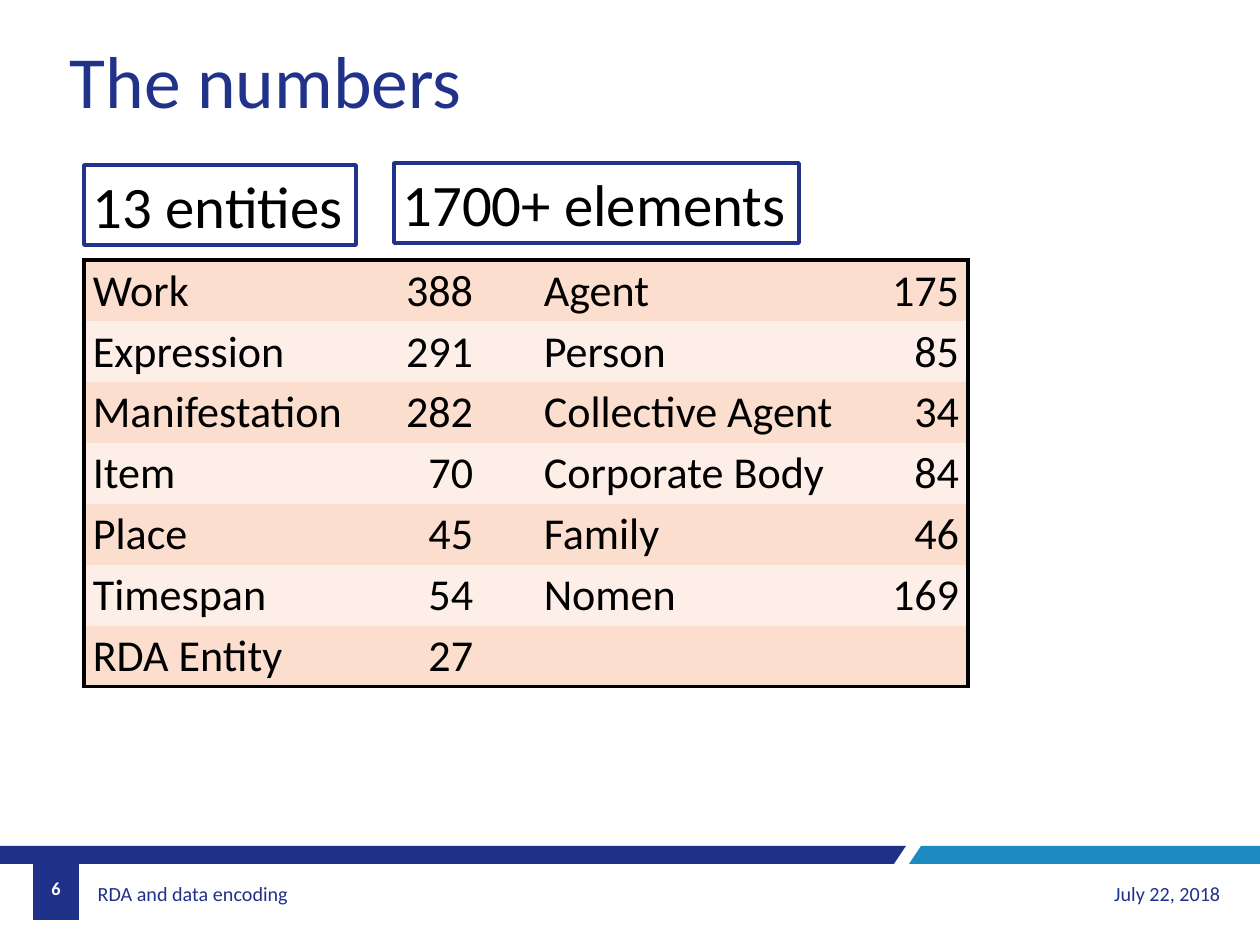
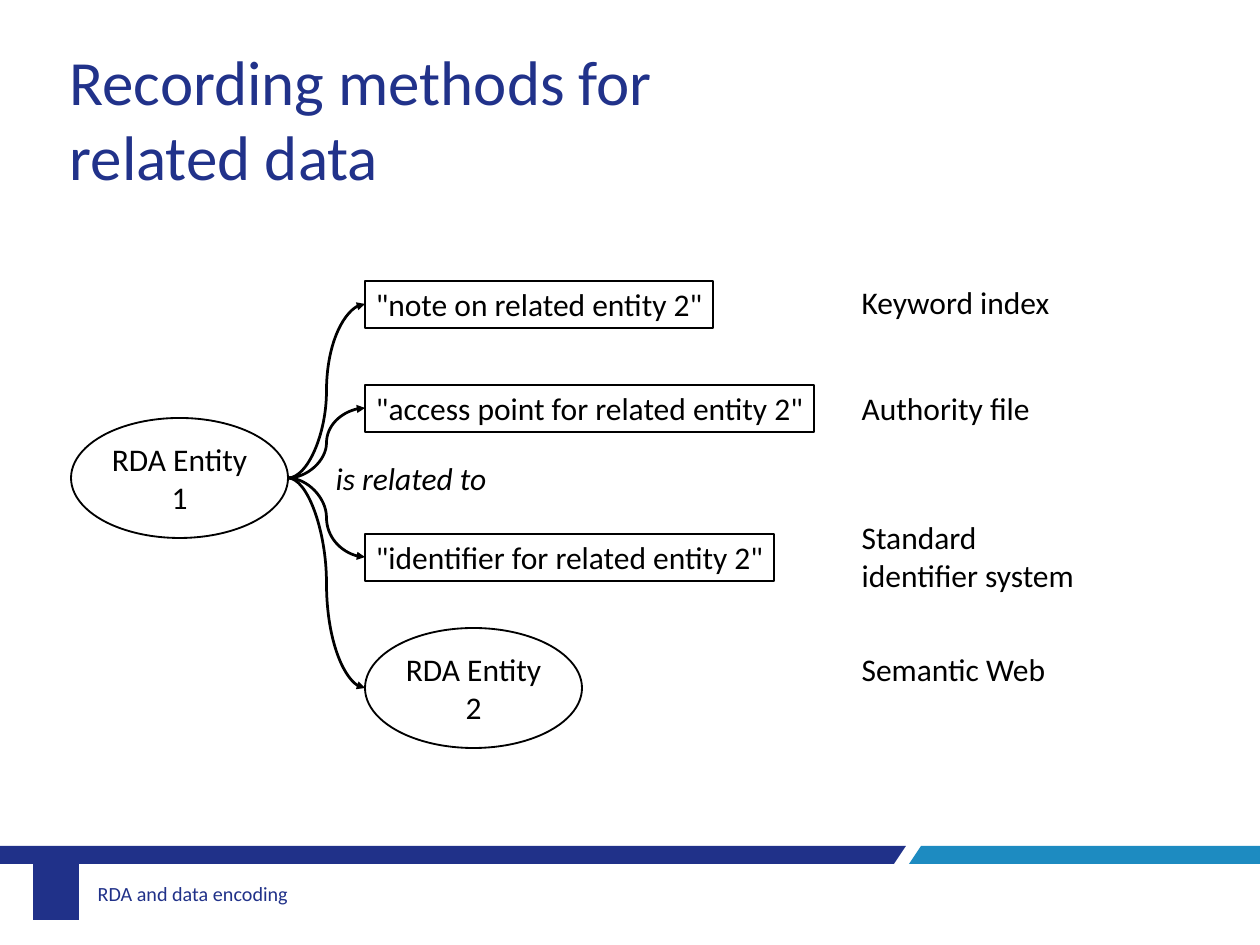
"""Builds two slides on entities and recording methods."""
from lxml import etree
from pptx import Presentation
from pptx.dml.color import RGBColor
from pptx.enum.shapes import MSO_CONNECTOR, MSO_SHAPE
from pptx.enum.text import MSO_ANCHOR, PP_ALIGN
from pptx.oxml.ns import qn
from pptx.util import Pt

PX = 10367
FONT = "Calibri"
RECT, OVAL = MSO_SHAPE.RECTANGLE, MSO_SHAPE.OVAL
CURVE = MSO_CONNECTOR.CURVE
LEFT, MID, RIGHT = PP_ALIGN.LEFT, PP_ALIGN.CENTER, PP_ALIGN.RIGHT
TOP, CENTER = MSO_ANCHOR.TOP, MSO_ANCHOR.MIDDLE
HUES = {
    "navy": "203189",
    "title": "21328A",
    "blue": "1D8BC1",
    "black": "000000",
    "white": "FFFFFF",
    "peach": "FBDECD",
    "pale": "FDEFE8",
}


def hue(name):
    return RGBColor.from_string(HUES[name])


def write(frame, text, size=25.7, color="black", align=LEFT, bold=False, slant=False):
    for i, line in enumerate(text.split("\n")):
        para = frame.add_paragraph() if i else frame.paragraphs[0]
        para.alignment = align
        run = para.add_run()
        run.text = line
        font = run.font
        font.name, font.size, font.bold, font.italic = FONT, Pt(size), bold, slant
        font.color.rgb = hue(color)


class Deck:
    def __init__(self):
        self.show = Presentation()
        self.show.slide_width, self.show.slide_height = 1260 * PX, 945 * PX
        self.shapes = None

    def page(self, title, top, wide, high, size, number="", date=""):
        layout = self.show.slide_layouts[6]
        self.shapes = self.show.slides.add_slide(layout).shapes
        self.band([(906, 846), (0, 846), (0, 864), (894, 864)], "navy")
        self.band([(1260, 846), (921, 846), (909, 864), (1260, 864)], "blue")
        self.band([(33, 846), (79, 846), (79, 920), (33, 920)], "navy")
        foot = {"size": 16.4, "color": "navy", "anchor": CENTER, "wrap": True}
        self.text("RDA and data encoding", 89, 869, 326, 49, **foot)
        if date:
            self.text(date, 906, 869, 323, 49, align=RIGHT, **foot)
        if number:
            self.text(number, 33, 864, 46, 49, size=14.9, color="white",
                      align=MID, bold=True, anchor=CENTER)
        self.text(title, 61, top, wide, high, size=size, color="title", wrap=True)

    def band(self, spots, color):
        path = self.shapes.build_freeform(*spots[0], scale=PX)
        path.add_line_segments(spots[1:], close=True)
        shape = path.convert_to_shape()
        shape.shadow.inherit = False
        shape.fill.solid()
        shape.fill.fore_color.rgb = hue(color)
        shape.line.fill.background()

    def fit(self, shape, text, wrap=False, anchor=TOP, **style):
        frame = shape.text_frame
        frame.word_wrap = wrap
        frame.vertical_anchor = anchor
        write(frame, text, **style)

    def text(self, text, x, y, wide, high, **style):
        box = self.shapes.add_textbox(x * PX, y * PX, wide * PX, high * PX)
        self.fit(box, text, **style)

    def box(self, text, x, y, wide, high, kind=RECT, edge="black", weight=1.5, **style):
        shape = self.shapes.add_shape(kind, x * PX, y * PX, wide * PX, high * PX)
        shape.shadow.inherit = False
        shape.fill.background()
        shape.line.color.rgb = hue(edge)
        shape.line.width = Pt(weight)
        self.fit(shape, text, **style)

    def arrow(self, x, y, to_x, to_y):
        link = self.shapes.add_connector(CURVE, x * PX, y * PX, to_x * PX, to_y * PX)
        link.line.color.rgb = hue("black")
        link.line.width = Pt(2.25)
        props = link._element.spPr
        etree.SubElement(props.find(qn("a:ln")), qn("a:tailEnd"), type="triangle")
        etree.SubElement(props, qn("a:effectLst"))

    def table(self, rows, x, y, widths, high):
        grid = self.shapes.add_table(len(rows), len(widths), x * PX, y * PX,
                                     sum(widths) * PX, len(rows) * high * PX).table
        grid.first_row = False
        for col, wide in zip(grid.columns, widths):
            col.width = wide * PX
        for r, row in enumerate(rows):
            grid.rows[r].height = high * PX
            for c, value in enumerate(row):
                cell = grid.cell(r, c)
                cell.margin_top = cell.margin_bottom = 4 * PX
                self.frame(cell, L=c == 0, R=c == len(widths) - 1,
                           T=r == 0, B=r == len(rows) - 1)
                cell.fill.solid()
                cell.fill.fore_color.rgb = hue("pale" if r % 2 else "peach")
                if value:
                    write(cell.text_frame, value, size=36,
                          align=RIGHT if value.isdigit() else LEFT)

    def frame(self, cell, **sides):
        props = cell._tc.get_or_add_tcPr()
        for side, drawn in sides.items():
            line = etree.SubElement(props, qn("a:ln" + side), w=str(Pt(3)))
            if drawn:
                fill = etree.SubElement(line, qn("a:solidFill"))
                etree.SubElement(fill, qn("a:srgbClr"), val=HUES["black"])
            else:
                etree.SubElement(line, qn("a:noFill"))


def count(deck):
    deck.page("The numbers", 31, 488, 110, 60, number="6", date="July 22, 2018")
    head = {"edge": "title", "weight": 3, "size": 48}
    deck.box("13 entities", 84, 165, 272, 80, **head)
    deck.box("1700+ elements", 394, 163, 405, 80, **head)
    rows = [
        ("Work", "388", "", "Agent", "175"),
        ("Expression", "291", "", "Person", "85"),
        ("Manifestation", "282", "", "Collective Agent", "34"),
        ("Item", "70", "", "Corporate Body", "84"),
        ("Place", "45", "", "Family", "46"),
        ("Timespan", "54", "", "Nomen", "169"),
        ("RDA Entity", "27", "", "", ""),
    ]
    deck.table(rows, 84, 260, (291, 107, 53, 347, 86), 61)


def relate(deck):
    deck.page("Recording methods for related data", 38, 657, 161, 51.4)
    deck.box("RDA Entity\n1", 71, 418, 217, 120, kind=OVAL, align=MID)
    goals = [
        ('"note on related entity 2"', 281, 348, 47, RECT),
        ('"access point for related entity 2"', 385, 449, 47, RECT),
        ('"identifier for related entity 2"', 534, 409, 47, RECT),
        ("RDA Entity\n2", 628, 217, 120, OVAL),
    ]
    for text, y, wide, high, kind in goals:
        deck.box(text, 365, y, wide, high, kind=kind, align=MID)
        deck.arrow(288, 478, 365, y + high // 2)
    deck.text("is related to", 327, 455, 170, 47, slant=True)
    uses = [
        ("Keyword index", 279, 207, 47, False),
        ("Authority file", 385, 188, 47, False),
        ("Standard identifier system", 514, 241, 86, True),
        ("Semantic Web", 646, 203, 47, False),
    ]
    for text, y, wide, high, wrap in uses:
        deck.text(text, 853, y, wide, high, wrap=wrap)


def main():
    deck = Deck()
    count(deck)
    relate(deck)
    deck.show.save("out.pptx")


if __name__ == "__main__":
    main()
